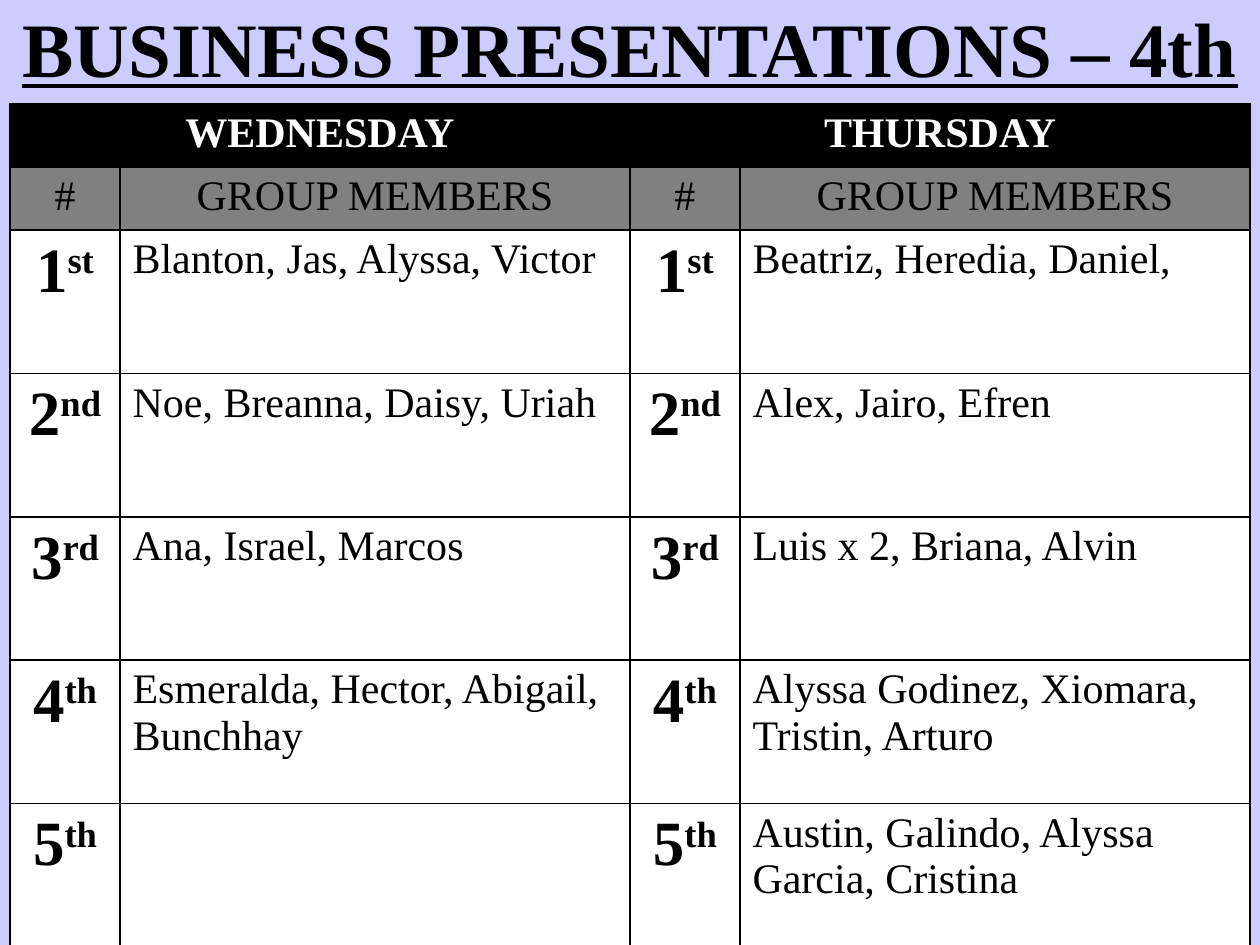
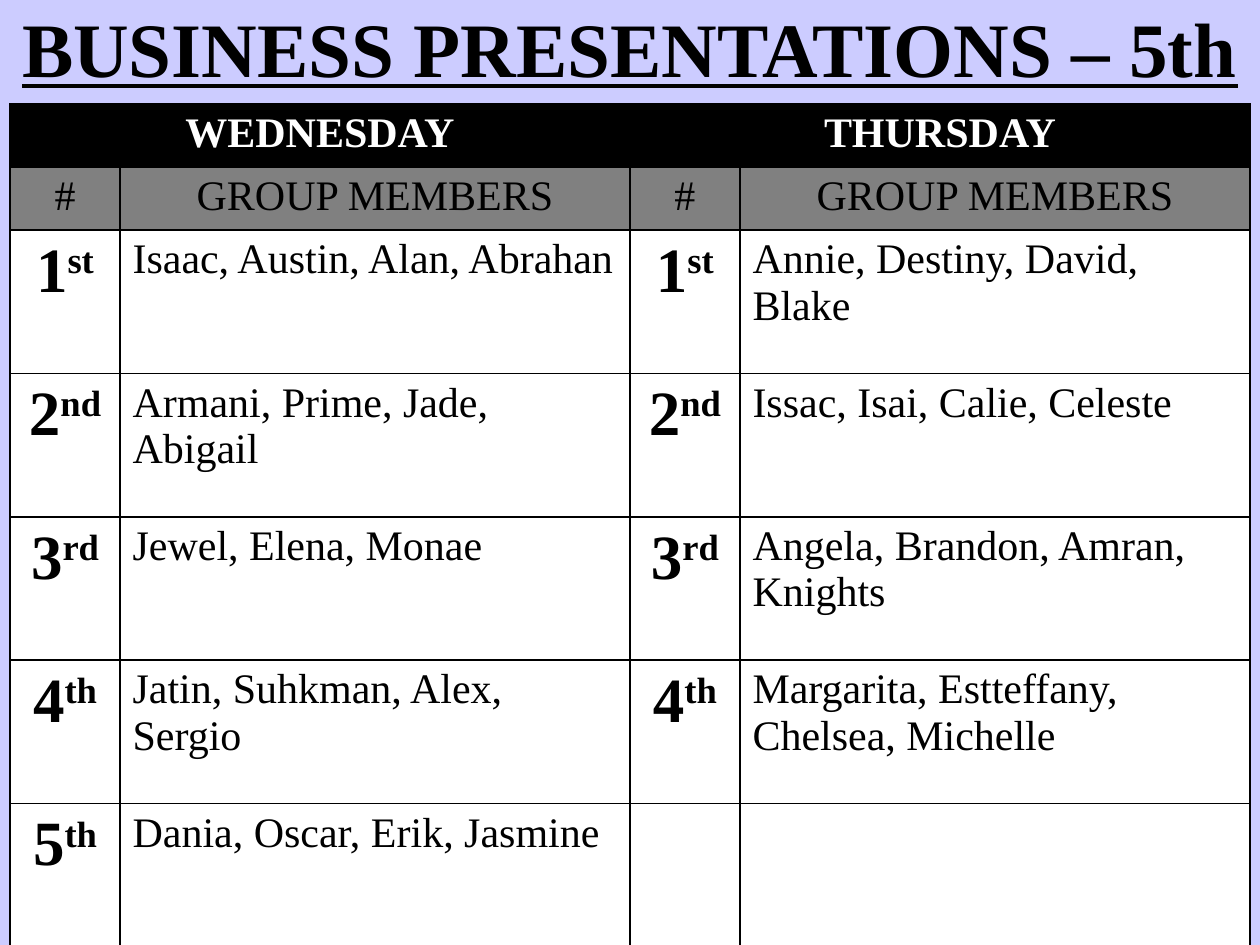
import pptx
import pptx.dml.color
import pptx.enum.text
import pptx.oxml
import pptx.oxml.ns
import pptx.util

# Content: one class period per slide, groups in order of presenting
DAYS = ("WEDNESDAY", "THURSDAY")
HEADINGS = ("#", "GROUP MEMBERS")
ORDINALS = (("1", "st"), ("2", "nd"), ("3", "rd"), ("4", "th"), ("5", "th"))
PERIODS = [
    ("BUSINESS PRESENTATIONS – 4th", [
        ["Blanton, Jas, Alyssa, Victor", "Noe, Breanna, Daisy, Uriah",
         "Ana, Israel, Marcos", "Esmeralda, Hector, Abigail, Bunchhay", ""],
        ["Beatriz, Heredia, Daniel,", "Alex, Jairo, Efren",
         "Luis x 2, Briana, Alvin", "Alyssa Godinez, Xiomara, Tristin, Arturo",
         "Austin, Galindo, Alyssa Garcia, Cristina"],
    ]),
    ("BUSINESS PRESENTATIONS – 5th", [
        ["Isaac, Austin, Alan, Abrahan", "Armani, Prime, Jade, Abigail",
         "Jewel, Elena, Monae", "Jatin, Suhkman, Alex, Sergio",
         "Dania, Oscar, Erik, Jasmine"],
        ["Annie, Destiny, David, Blake", "Issac, Isai, Calie, Celeste",
         "Angela, Brandon, Amran, Knights",
         "Margarita, Estteffany, Chelsea, Michelle"],
    ]),
]

# Shared style
FONT = "Times New Roman"
BLACK, WHITE, GREY, LAVENDER = "000000", "FFFFFF", "808080", "CCCCFF"
CENTER = pptx.enum.text.PP_ALIGN.CENTER
LEFT = pptx.enum.text.PP_ALIGN.LEFT

# Layout in px, 126 to the inch
PAGE_WIDTH, PAGE_HEIGHT, TITLE_HEIGHT = 1260, 945, 94
TABLE_LEFT, TABLE_TOP, TABLE_BOTTOM = 10, 104, 940
COLUMN_WIDTHS = (110, 510) * len(DAYS)
HEADER_HEIGHTS = (60, 59)


def px(length):
    return pptx.util.Emu(round(length * 914400 / 126))


def color(code):
    return pptx.dml.color.RGBColor.from_string(code)


def paint(fill, code):
    fill.solid()
    fill.fore_color.rgb = color(code)


def write(frame, text, size, ink=BLACK, bold=False, align=CENTER, raised=""):
    """Fill the first paragraph; raised text follows as a superscript."""
    para = frame.paragraphs[0]
    para.alignment = align
    font = para.font
    font.name, font.size, font.bold = FONT, pptx.util.Pt(size), bold
    font.color.rgb = color(ink)
    if text:
        para.add_run().text = text
    if raised:
        span = para.add_run()
        span.text = raised
        span.font._element.set("baseline", "30000")
    return para


def style_cell(cell, fill):
    properties = cell._tc.get_or_add_tcPr()
    for side in "LRTB":
        properties.append(pptx.oxml.parse_xml(
            f'<a:ln{side} {pptx.oxml.ns.nsdecls("a")} w="12700"><a:solidFill>'
            f'<a:srgbClr val="{BLACK}"/></a:solidFill></a:ln{side}>'))
    paint(cell.fill, fill)


def add_title(page, title):
    box = page.shapes.add_textbox(0, 0, px(PAGE_WIDTH), px(TITLE_HEIGHT))
    frame = box.text_frame
    frame.word_wrap = True
    frame.vertical_anchor = pptx.enum.text.MSO_ANCHOR.MIDDLE
    write(frame, title, 44, bold=True).font.underline = True


def add_schedule(page, groups_by_day):
    # Group rows share the height left under the two header rows
    group_height = (TABLE_BOTTOM - TABLE_TOP - sum(HEADER_HEIGHTS)) / len(ORDINALS)
    row_heights = HEADER_HEIGHTS + (group_height,) * len(ORDINALS)
    table = page.shapes.add_table(
        len(row_heights), len(COLUMN_WIDTHS), px(TABLE_LEFT), px(TABLE_TOP),
        px(sum(COLUMN_WIDTHS)), px(TABLE_BOTTOM - TABLE_TOP)).table
    for column, width in zip(table.columns, COLUMN_WIDTHS):
        column.width = px(width)
    for index, (row, height) in enumerate(zip(table.rows, row_heights)):
        row.height = px(height)
        for cell in row.cells:
            style_cell(cell, (BLACK, GREY)[index] if index < 2 else WHITE)

    # Each day takes a number column and a names column
    for day, (name, groups) in enumerate(zip(DAYS, groups_by_day)):
        first = day * 2
        table.cell(0, first).merge(table.cell(0, first + 1))
        write(table.cell(0, first).text_frame, name, 24, WHITE, bold=True)
        for offset, heading in enumerate(HEADINGS):
            write(table.cell(1, first + offset).text_frame, heading, 24)
        for row, ((number, suffix), members) in enumerate(zip(ORDINALS, groups), 2):
            write(table.cell(row, first).text_frame, number, 36, bold=True, raised=suffix)
            write(table.cell(row, first + 1).text_frame, members, 24, align=LEFT)


def main():
    deck = pptx.Presentation()
    deck.slide_width, deck.slide_height = px(PAGE_WIDTH), px(PAGE_HEIGHT)
    for title, groups_by_day in PERIODS:
        page = deck.slides.add_slide(deck.slide_layouts[6])
        paint(page.background.fill, LAVENDER)
        add_title(page, title)
        add_schedule(page, groups_by_day)
    deck.save("out.pptx")


if __name__ == "__main__":
    main()
